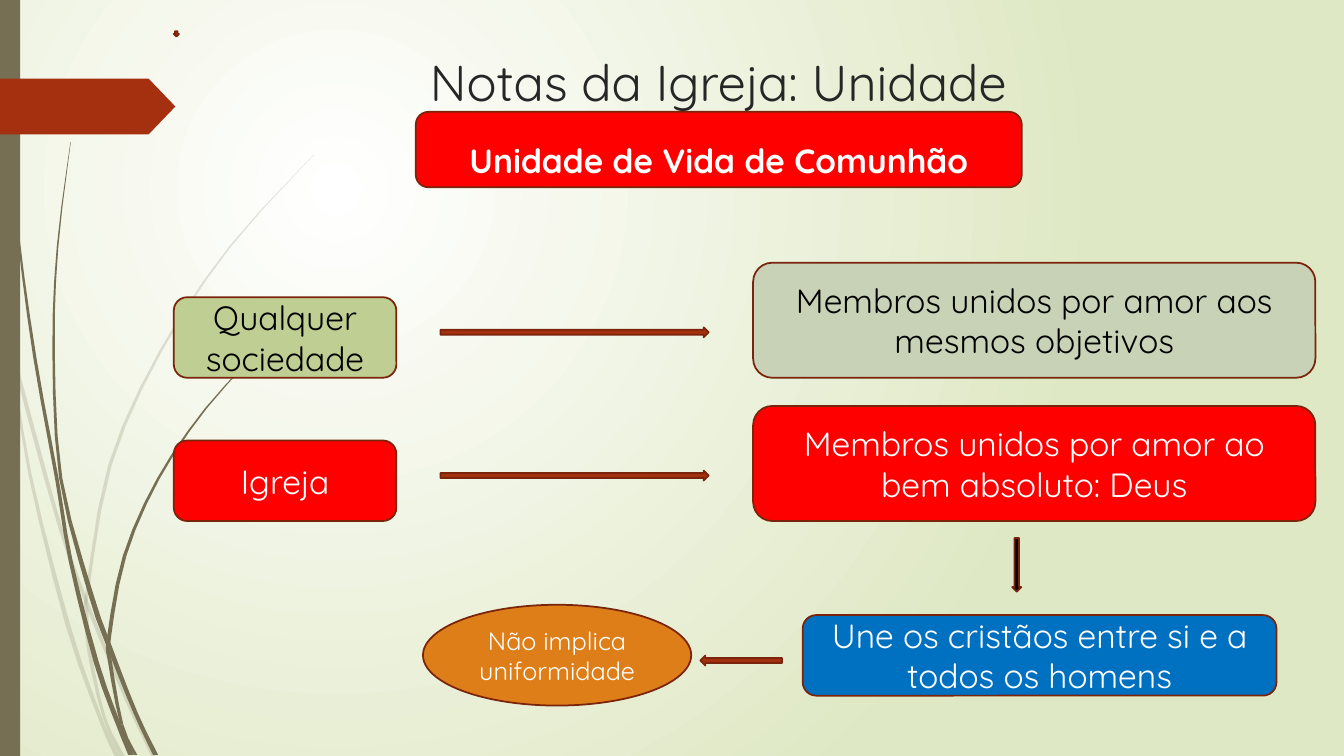
from dataclasses import dataclass

from lxml.etree import SubElement
from pptx import Presentation
from pptx.dml.color import RGBColor
from pptx.enum.shapes import MSO_SHAPE as Preset
from pptx.enum.text import MSO_ANCHOR as Anchor, PP_ALIGN as Align
from pptx.oxml.ns import qn
from pptx.util import Cm, Pt

COLORS = {
    "white": "FFFFFF", "black": "000000", "title": "262626", "meadow": "DFE8C4",
    "olive": "766F54", "rust": "A53010", "outline": "7A240C", "red": "FF0000",
    "green": "BFCE92", "sage": "C7D2B7", "blue": "0070C0", "orange": "DE7E18",
}
FONT = "Quicksand"
WIDTH, HEIGHT = 33.87, 19.05
ROW_TOP, ROW_PITCH = 6.62, 3.61
CURVE_STEPS = 3


@dataclass
class Block:
    """A preset shape, measured in centimetres."""
    left: float
    top: float
    width: float
    height: float
    fill: str
    text: str = ""
    text_color: str = "white"
    preset: Preset = Preset.ROUNDED_RECTANGLE
    size: int = 24
    bold: bool = False
    spacing: float = 1.0
    outlined: bool = True


@dataclass
class Blade:
    """A blade of grass: (centre x, y, thickness) from tip to root, in centimetres.

    The blade is made of sections that meet at the points numbered in joints.
    """
    points: list[tuple[float, float, float]]
    joints: tuple[int, ...]
    opacity: int = 100


def color(name: str) -> RGBColor:
    return RGBColor.from_string(COLORS[name])


def write(shape, text: str, size: int, text_color: str, anchor: Anchor,
          bold: bool = False, spacing: float = 1.0) -> None:
    frame = shape.text_frame
    frame.word_wrap = True
    frame.vertical_anchor = anchor
    paragraph = frame.paragraphs[0]
    paragraph.text = text
    paragraph.alignment = Align.CENTER
    paragraph.line_spacing = spacing
    paragraph.font.name = FONT
    paragraph.font.size = Pt(size)
    paragraph.font.bold = bold
    paragraph.font.color.rgb = color(text_color)


def draw_block(slide, block: Block):
    shape = slide.shapes.add_shape(block.preset, Cm(block.left), Cm(block.top),
                                   Cm(block.width), Cm(block.height))
    shape.shadow.inherit = False
    shape.fill.solid()
    shape.fill.fore_color.rgb = color(block.fill)
    if block.outlined:
        shape.line.color.rgb = color("outline")
        shape.line.width = Pt(1.25)
    else:
        shape.line.fill.background()
    if block.text:
        write(shape, block.text, block.size, block.text_color, Anchor.MIDDLE,
              block.bold, block.spacing)
    return shape


def smooth(points: list[tuple[float, float, float]]) -> list[tuple[float, ...]]:
    """Run a Catmull-Rom curve through the points."""
    padded = [points[0], *points, points[-1]]
    curve = []
    for a, b, c, d in zip(padded, padded[1:], padded[2:], padded[3:]):
        for step in range(CURVE_STEPS):
            t = step / CURVE_STEPS
            curve.append(tuple(
                q + t * (r - p) / 2 + t ** 2 * (2 * p - 5 * q + 4 * r - s) / 2
                + t ** 3 * (3 * q - p - 3 * r + s) / 2
                for p, q, r, s in zip(a, b, c, d)))
    return [*curve, points[-1]]


def draw_section(slide, curve: list[tuple[float, ...]], opacity: int) -> None:
    right = [(Cm(x + w / 2), Cm(y)) for x, y, w in curve]
    left = [(Cm(x - w / 2), Cm(y)) for x, y, w in reversed(curve)]
    builder = slide.shapes.build_freeform(*right[0])
    builder.add_line_segments(right[1:] + left, close=True)
    shape = builder.convert_to_shape()
    shape.shadow.inherit = False
    shape.line.fill.background()
    shape.fill.solid()
    shape.fill.fore_color.rgb = color("olive")
    if opacity < 100:
        tint = shape.fill._xPr.find(qn("a:solidFill"))[0]
        SubElement(tint, qn("a:alpha")).set("val", str(opacity * 1000))


def draw_blade(slide, blade: Blade) -> None:
    curve = smooth(blade.points)
    ends = [0, *blade.joints, len(blade.points) - 1]
    for first, last in zip(ends, ends[1:]):
        section = curve[first * CURVE_STEPS:last * CURVE_STEPS + 1]
        draw_section(slide, section, blade.opacity)


def paint_background(slide) -> None:
    fill = slide.background.fill
    fill.gradient()
    for stop, name in zip(fill.gradient_stops, ("white", "meadow")):
        stop.color.rgb = color(name)
    gradient = fill._xPr.find(qn("a:gradFill"))
    gradient.remove(gradient.find(qn("a:lin")))
    radial = SubElement(gradient, qn("a:path"))
    radial.set("path", "circle")
    center = SubElement(radial, qn("a:fillToRect"))
    for side, percent in zip("ltrb", (50, 50, 100, 100)):
        center.set(side, str(percent * 1000))


BLADES = [
    # Pale grass
    Blade([(.02, 7.3, .05), (.28, 8.89, .05), (.75, 11.93, .08), (1.71, 15.75, .12),
           (2.54, 18.14, .1), (2.95, 19.05, .13)], (1, 4), 20),
    Blade([(.36, 8.76, .01), (.49, 9.55, .1), (1.5, 13.23, .1), (2.19, 15.2, .1),
           (3.18, 17.6, .1), (3.87, 19.05, .12)], (3,), 20),
    Blade([(7.92, 3.89, .01), (5.8, 6.21, .05), (4.04, 8.86, .07), (2.77, 11.72, .09),
           (2.2, 14.9, .08), (2.18, 15.4, .1), (2.25, 16.41, .1), (2.62, 18.06, .08),
           (3.08, 19.05, .12)], (4, 5, 7), 20),
    # Dark grass
    Blade([(.08, 0, .03), (.19, 2.8, .04), (.46, 5.92, .05), (.88, 9.02, .08),
           (1.44, 12.1, .09), (1.78, 14.13, .1), (2.43, 16.7, .13), (2.98, 18.24, .13),
           (3.3, 19.02, .14)], (4, 7)),
    Blade([(1.78, 3.58, .01), (1.45, 6.22, .04), (1.35, 8.86, .06), (1.53, 12.05, .08),
           (2.3, 15.01, .13), (2.77, 16.33, .13), (3.41, 17.95, .11),
           (3.92, 19.02, .13)], (3, 5)),
    Blade([(6.61, 8.74, .02), (5.19, 10.29, .05), (3.99, 12.06, .07), (3.14, 14.01, .09),
           (2.75, 16.05, .1), (2.77, 16.66, .1), (3.07, 18.26, .08),
           (3.42, 19.02, .08)], (4, 5, 6)),
]

SIDEBAR = Block(0, 0, .51, HEIGHT, "olive", preset=Preset.RECTANGLE, outlined=False)
TAG = Block(0, 1.98, 4.42, 1.41, "rust", preset=Preset.PENTAGON, outlined=False)

# Each row: group, its bond, and the colours of both boxes and their text
COMPARISONS = [
    ("Qualquer sociedade", "Membros unidos por amor aos mesmos objetivos",
     "green", "sage", "black"),
    ("Igreja", "Membros unidos por amor ao bem absoluto: Deus",
     "red", "red", "white"),
]

HEADING = Block(10.48, 2.82, 15.27, 1.9, "red", "Unidade de Vida de Comunhão",
                bold=True, spacing=1.5)
CONCLUSIONS = [
    Block(20.23, 15.5, 11.94, 2.03, "blue", "Une os cristãos entre si e a todos os homens"),
    Block(4.38, .79, .13, .13, "rust", preset=Preset.DOWN_ARROW),
    Block(25.51, 13.56, .23, 1.35, "black", preset=Preset.DOWN_ARROW),
    Block(10.66, 15.24, 6.76, 2.54, "orange", "Não implica uniformidade",
          preset=Preset.OVAL, size=18),
    Block(17.65, 16.52, 2.06, .25, "rust", preset=Preset.LEFT_ARROW),
]


def main() -> None:
    presentation = Presentation()
    presentation.slide_width, presentation.slide_height = Cm(WIDTH), Cm(HEIGHT)
    slide = presentation.slides.add_slide(presentation.slide_layouts[6])

    # Backdrop
    paint_background(slide)
    for blade in BLADES:
        draw_blade(slide, blade)
    draw_block(slide, SIDEBAR)
    draw_block(slide, TAG).adjustments[0] = .48

    # Title and heading
    title = slide.shapes.add_textbox(Cm(10), Cm(1.17), Cm(16.2), Cm(2.31))
    write(title, "Notas da Igreja: Unidade", 36, "title", Anchor.TOP)
    draw_block(slide, HEADING)

    # Comparison rows
    for row, (group, bond, group_fill, bond_fill, text_color) in enumerate(COMPARISONS):
        top = ROW_TOP + row * ROW_PITCH
        draw_block(slide, Block(4.38, top + .87, 5.61, 2.03, group_fill, group, text_color))
        draw_block(slide, Block(18.98, top, 14.17, 2.9, bond_fill, bond, text_color))
        draw_block(slide, Block(11.1, top + 1.63, 6.76, .25, "rust",
                                preset=Preset.RIGHT_ARROW))

    # Conclusions
    for block in CONCLUSIONS:
        draw_block(slide, block)

    presentation.save("out.pptx")


if __name__ == "__main__":
    main()
